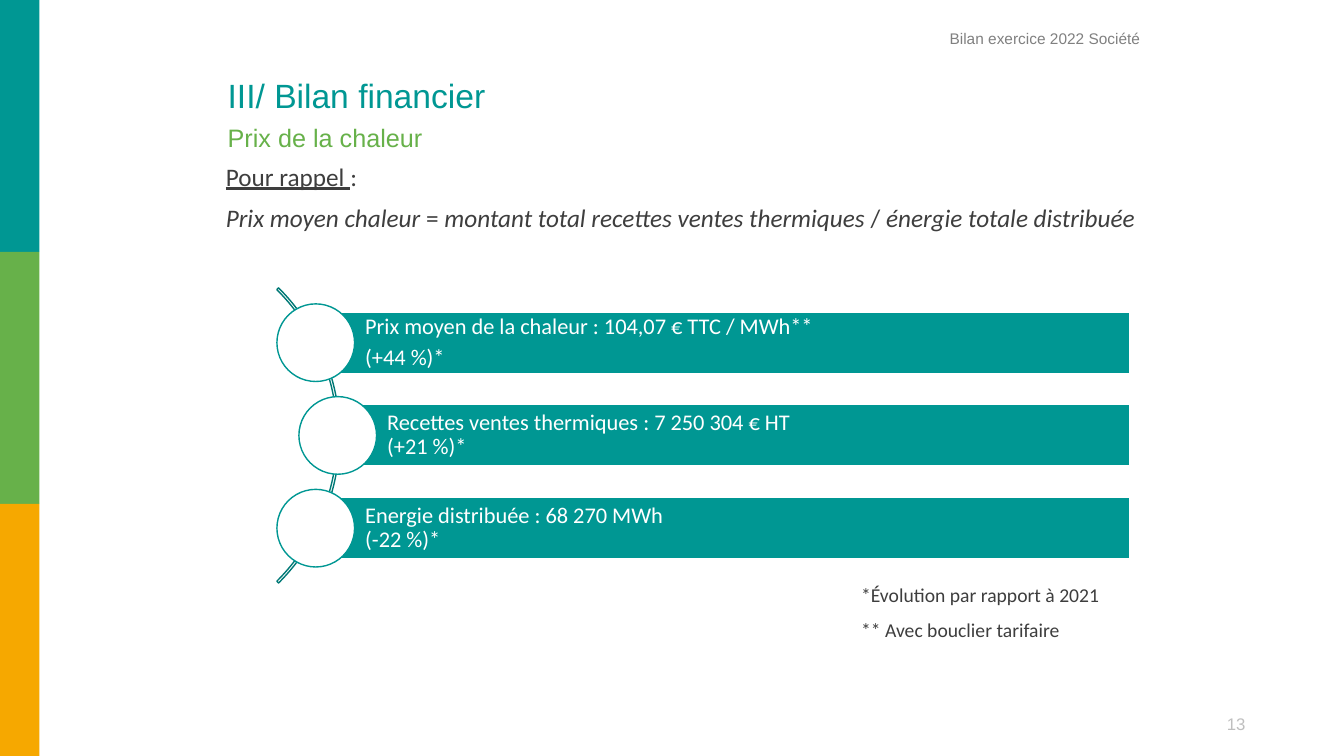
from math import sqrt
from pptx import Presentation
from pptx.dml.color import RGBColor
from pptx.enum.shapes import MSO_SHAPE
from pptx.enum.text import MSO_ANCHOR, PP_ALIGN
from pptx.util import Inches, Pt

WIDTH, HEIGHT = 13.33, 7.5
TEAL, GREEN, ORANGE = "009793", "67B14A", "F6A800"
WHITE, DARK, GRAY, PALE, ARC_LINE = "FFFFFF", "3E3E3E", "808080", "BFBFBF", "007976"

HEADINGS = [
    ("III/ Bilan financier", (2.16, 0.74, 7.47, 0.4), 24, TEAL),
    ("Prix de la chaleur", (2.16, 1.2, 7.02, 0.33), 18, GREEN),
    ("Bilan exercice 2022 Société", (9.32, 0.26, 3.51, 0.22), 11, GRAY),
]
PAGE_NUMBER = "13"
REMINDER = [
    [("Pour rappel ", "underline"), (": ", "")],
    [
        ("Prix moyen chaleur ", "italic"),
        ("= ", ""),
        ("montant total recettes ventes thermiques", "italic"),
        (" / ", ""),
        ("énergie totale distribuée", "italic"),
    ],
]
INDICATORS = [
    [[("Prix moyen de la chaleur : 104,07 € TTC / MWh**", "")], [("(+44 %)*", "")]],
    [[("Recettes ventes thermiques : 7 250 304 € HT", ""), ("(+21 %)*", "break")]],
    [[("Energie distribuée : 68 270 MWh", ""), ("(-22 %)*", "break")]],
]
FOOTNOTES = [[("*Évolution par rapport à 2021", "")], [("** Avec bouclier tarifaire", "")]]

ARC_CENTER_X, ARC_CENTER_Y, ARC_RADIUS = 1.3, 4.32, 2.07
NODE_RADIUS, NODE_SIZE, ROW_PITCH = 2.05, 0.77, 0.92
BAR_RIGHT, BAR_HEIGHT = 11.2, 0.61

presentation = Presentation()
presentation.slide_width = Inches(WIDTH)
presentation.slide_height = Inches(HEIGHT)
slide = presentation.slides.add_slide(presentation.slide_layouts[6])


def color(value):
    return RGBColor.from_string(value)


def add_shape(kind, box, fill=None, line=None):
    shape = slide.shapes.add_shape(kind, *map(Inches, box))
    shape.shadow.inherit = False
    if fill:
        shape.fill.solid()
        shape.fill.fore_color.rgb = color(fill)
    else:
        shape.fill.background()
    if line:
        shape.line.color.rgb = color(line)
        shape.line.width = Pt(1)
    else:
        shape.line.fill.background()
    return shape


def write(shape, paragraphs, size, ink, font="Calibri", align=PP_ALIGN.LEFT,
          insets=(0, 0, 0, 0), anchor=MSO_ANCHOR.TOP, gap=10):
    frame = shape.text_frame
    frame.word_wrap = True
    frame.vertical_anchor = anchor
    frame.margin_left, frame.margin_top, frame.margin_right, frame.margin_bottom = map(Inches, insets)
    for index, runs in enumerate(paragraphs):
        paragraph = frame.add_paragraph() if index else frame.paragraphs[0]
        paragraph.alignment = align
        paragraph.line_spacing = 0.9
        if index:
            paragraph.space_before = Pt(gap)
        for text, style in runs:
            if style == "break":
                paragraph.add_line_break()
            run = paragraph.add_run()
            run.text = text
            run.font.name = font
            run.font.size = Pt(size)
            run.font.color.rgb = color(ink)
            run.font.italic = style == "italic"
            run.font.underline = style == "underline"


def add_text(box, paragraphs, size, ink, **options):
    write(slide.shapes.add_textbox(*map(Inches, box)), paragraphs, size, ink, **options)


band_height = HEIGHT / 3
for index, band_color in enumerate((TEAL, GREEN, ORANGE)):
    add_shape(MSO_SHAPE.RECTANGLE, (0, index * band_height, 0.39, band_height), band_color)

default_insets = (0.1, 0.05, 0.1, 0.05)
for text, box, size, ink in HEADINGS:
    add_text(box, [[(text, "")]], size, ink, font="Arial", insets=default_insets)
add_text((11.99, 7.05, 0.54, 0.3), [[(PAGE_NUMBER, "")]], 12, PALE, font="Arial",
         align=PP_ALIGN.CENTER, insets=default_insets)
add_text((2.24, 1.63, 9.22, 0.68), REMINDER, 18, DARK, align=PP_ALIGN.JUSTIFY)

arc = add_shape(MSO_SHAPE.BLOCK_ARC, (ARC_CENTER_X - ARC_RADIUS, ARC_CENTER_Y - ARC_RADIUS,
                                      2 * ARC_RADIUS, 2 * ARC_RADIUS), line=ARC_LINE)
for index, value in enumerate((189, 27, 0.006)):
    arc.adjustments[index] = value

for row, paragraphs in enumerate(INDICATORS):
    offset = (row - 1) * ROW_PITCH
    x = ARC_CENTER_X + sqrt(NODE_RADIUS ** 2 - offset ** 2)
    y = ARC_CENTER_Y + offset
    bar = add_shape(MSO_SHAPE.RECTANGLE, (x, y - BAR_HEIGHT / 2, BAR_RIGHT - x, BAR_HEIGHT), TEAL, WHITE)
    write(bar, paragraphs, 16, WHITE, insets=(0.49, 0.04, 0.04, 0.04), anchor=MSO_ANCHOR.MIDDLE, gap=5)
    add_shape(MSO_SHAPE.OVAL, (x - NODE_SIZE / 2, y - NODE_SIZE / 2, NODE_SIZE, NODE_SIZE), WHITE, TEAL)

add_text((8.54, 5.81, 2.99, 0.31), FOOTNOTES, 14, DARK)

presentation.save("out.pptx")
